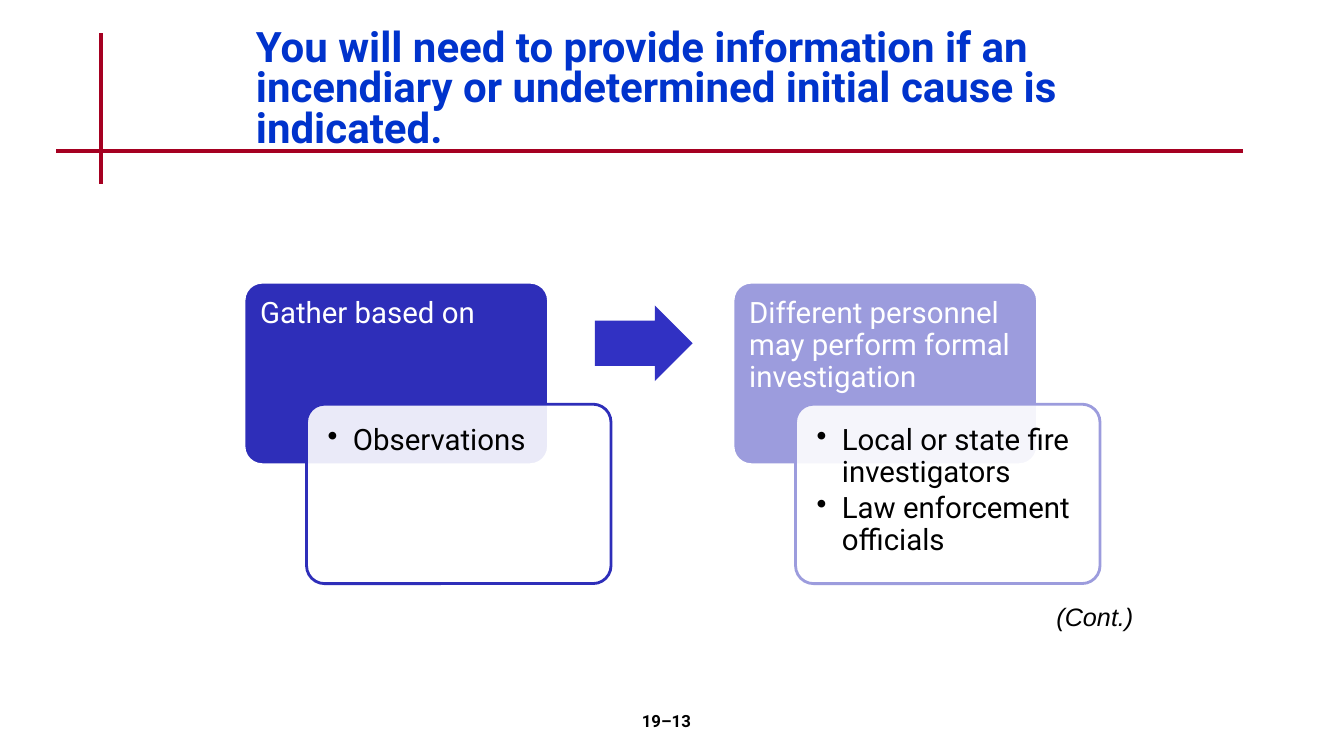
from lxml import etree
from pptx import Presentation
from pptx.dml.color import RGBColor
from pptx.enum.shapes import MSO_CONNECTOR, MSO_SHAPE
from pptx.enum.text import MSO_ANCHOR, PP_ALIGN
from pptx.oxml.ns import qn
from pptx.util import Pt

TITLE = ("You will need to provide information if an incendiary "
         "or undetermined initial cause is indicated.")
STAGES = [
    ("Gather based on", ["Observations"], "indigo"),
    ("Different personnel may perform formal investigation",
     ["Local or state fire investigators", "Law enforcement officials"], "lilac"),
]
PAGE_NUMBER = "19–13"
CONTINUED = "(Cont.)"

COLORS = {"white": "FFFFFF", "black": "000000", "title": "0033CC", "rule": "A50021",
          "indigo": "2E2EB9", "arrow": "3131C3", "lilac": "9C9CDD"}

PX = 9144  # 100 px to the inch
RULES = [(100, 33, 100, 183), (56, 150, 1233, 150)]
STAGE_LEFT, STAGE_TOP, STAGE_STEP = 242, 280, 485
HEAD_W, HEAD_H, HEAD_TEXT_H = 302, 181, 121
DETAIL_DX, DETAIL_DY, DETAIL_H = 62, 121, 178
DETAIL_PAD = 5
INSET, HEAD_BOTTOM_INSET, BULLET_INDENT = 16, 9, 25

RECT, ARROW = MSO_SHAPE.ROUNDED_RECTANGLE, MSO_SHAPE.RIGHT_ARROW
STRAIGHT, TOP = MSO_CONNECTOR.STRAIGHT, MSO_ANCHOR.TOP
LEFT, CENTER, RIGHT = PP_ALIGN.LEFT, PP_ALIGN.CENTER, PP_ALIGN.RIGHT


def px(*values):
    return [v * PX for v in values]


def rgb(name):
    return RGBColor.from_string(COLORS[name])


def add_rule(slide, ends):
    line = slide.shapes.add_connector(STRAIGHT, *px(*ends))
    line.line.color.rgb = rgb("rule")
    line.line.width = Pt(3)
    etree.SubElement(line._element.spPr, qn("a:effectLst"))


def add_shape(slide, kind, box, adjustments, fill, line=None, alpha=None):
    """Add a flat preset shape; alpha is its opacity in percent."""
    sp = slide.shapes.add_shape(kind, *px(*box))
    sp.shadow.inherit = False
    for i, value in enumerate(adjustments):
        sp.adjustments[i] = value
    sp.fill.solid()
    sp.fill.fore_color.rgb = rgb(fill)
    if alpha:
        color = sp._element.spPr.find(qn("a:solidFill"))[0]
        etree.SubElement(color, qn("a:alpha"), val=str(alpha * 1000))
    if line:
        sp.line.color.rgb = rgb(line)
        sp.line.width = Pt(2)
    else:
        sp.line.fill.background()


def add_text(slide, box, paragraphs, size, color, font="Roboto", align=LEFT, spacing=1.0,
             after=0, insets=(10, 5, 10, 5), bullets=False, bold=False, italic=False):
    tf = slide.shapes.add_textbox(*px(*box)).text_frame
    tf.word_wrap = True
    tf.vertical_anchor = TOP
    tf.margin_left, tf.margin_top, tf.margin_right, tf.margin_bottom = px(*insets)
    for i, text in enumerate(paragraphs):
        p = tf.paragraphs[0] if i == 0 else tf.add_paragraph()
        p.text = text
        p.alignment = align
        p.line_spacing = spacing
        p.space_after = Pt(after)
        if bullets:
            pPr = p._p.get_or_add_pPr()
            pPr.set("marL", str(BULLET_INDENT * PX))
            pPr.set("indent", str(-BULLET_INDENT * PX))
            etree.SubElement(pPr, qn("a:buChar"), char="•")
        f = p.runs[0].font
        f.name, f.size, f.bold, f.italic = font, Pt(size), bold, italic
        f.color.rgb = rgb(color)


def add_stage(slide, left, heading, details, color):
    """Add a heading card with a translucent detail card overlapping its corner."""
    add_shape(slide, RECT, (left, STAGE_TOP, HEAD_W, HEAD_H), [0.1], color, "white")
    add_text(slide, (left, STAGE_TOP, HEAD_W, HEAD_TEXT_H), [heading], 21, "white",
             spacing=0.9, insets=(INSET, INSET, INSET, HEAD_BOTTOM_INSET))
    x, y = left + DETAIL_DX, STAGE_TOP + DETAIL_DY
    add_shape(slide, RECT, (x, y, HEAD_W, DETAIL_H), [0.1], "white", color, alpha=90)
    inner = (x + DETAIL_PAD, y + DETAIL_PAD,
             HEAD_W - 2 * DETAIL_PAD, DETAIL_H - 2 * DETAIL_PAD)
    add_text(slide, inner, details, 21, "black", spacing=0.9, after=3,
             insets=(INSET,) * 4, bullets=True)


def main():
    prs = Presentation()
    prs.slide_width, prs.slide_height = px(1333, 750)
    slide = prs.slides.add_slide(prs.slide_layouts[6])
    for ends in RULES:
        add_rule(slide, ends)
    add_text(slide, (244, 25, 839, 100), [TITLE], 30, "title", spacing=0.8, bold=True)
    add_text(slide, (522, 700, 278, 50), [PAGE_NUMBER], 12, "black", align=CENTER, bold=True)
    for i, (heading, details, color) in enumerate(STAGES):
        add_stage(slide, STAGE_LEFT + i * STAGE_STEP, heading, details, color)
    add_shape(slide, ARROW, (590, 303, 97, 75), [0.6, 0.5], "arrow")
    add_text(slide, (967, 592, 167, 40), [CONTINUED], 18, "black", font="Arial",
             align=RIGHT, italic=True)
    prs.save("out.pptx")


if __name__ == "__main__":
    main()
